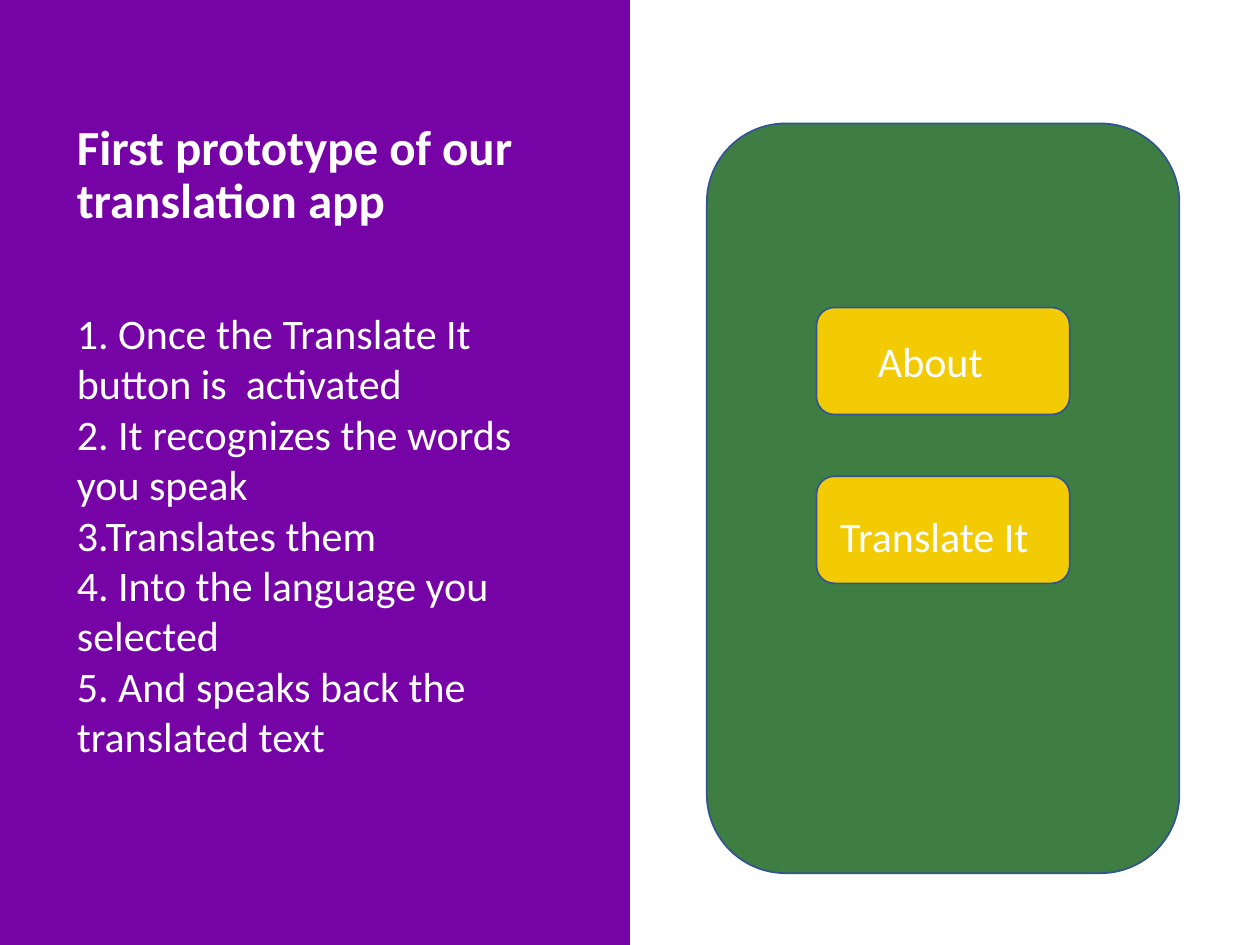
from lxml.etree import SubElement
from pptx import Presentation
from pptx.dml.color import RGBColor
from pptx.enum.shapes import MSO_SHAPE
from pptx.enum.text import MSO_ANCHOR, MSO_AUTO_SIZE, PP_ALIGN
from pptx.oxml.ns import qn
from pptx.util import Inches, Pt

HEADING = "First prototype of our translation app"
STEPS = [
    "1. Once the Translate It button is  activated",
    "2. It recognizes the words you speak",
    "3.Translates them",
    "4. Into the language you selected",
    "5. And speaks back the translated text",
]
BUTTONS = [
    ("About", (6.87, 2.61, 1.23, 0.5)),
    ("Translate It", (6.57, 4, 2.01, 0.5)),
]
THEME = {
    "font": "Calibri",
    "heading": 28,
    "body": 24,
    "text": "FFFFFF",
    "panel": "7503A6",
    "phone": "3F7E43",
    "button": "F2CB05",
    "outline": "325491",
}
PANEL = (0, 0, 5, 7.5)
HEADING_BOX = (0.51, 0.67, 4.03, 1.45)
STEPS_BOX = (0.51, 2.39, 4.03, 3.74)
PHONE = (5.61, 0.98, 3.75, 5.95)
BUTTON_LEFT, BUTTON_TOP, BUTTON_WIDTH, BUTTON_HEIGHT = 6.48, 2.44, 2.01, 0.85
BUTTON_PITCH = 1.34


def color(role):
    return RGBColor.from_string(THEME[role])


def place(holder, box):
    holder.left, holder.top, holder.width, holder.height = map(Inches, box)


def add_block(slide, preset, box, fill, outline=None):
    block = slide.shapes.add_shape(preset, *map(Inches, box))
    block.shadow.inherit = False
    block.fill.solid()
    block.fill.fore_color.rgb = color(fill)
    if outline:
        block.line.color.rgb = color(outline)
        block.line.width = Pt(1)
    else:
        block.line.fill.background()
    return block


def write(holder, lines, size, anchor=MSO_ANCHOR.TOP, bold=False, spacing=1.0):
    frame = holder.text_frame
    frame.text = "\n".join(lines)
    frame.word_wrap = True
    frame.auto_size = MSO_AUTO_SIZE.NONE
    frame.vertical_anchor = anchor
    for paragraph in frame.paragraphs:
        paragraph.alignment = PP_ALIGN.LEFT
        paragraph.line_spacing = spacing
        paragraph.space_before = Pt(0)
        font = paragraph.font
        font.name, font.size, font.bold = THEME["font"], Pt(THEME[size]), bold
        font.color.rgb = color("text")


def remove_bullets(holder):
    for paragraph in holder.text_frame.paragraphs:
        properties = paragraph._p.get_or_add_pPr()
        properties.set("marL", "0")
        properties.set("indent", "0")
        SubElement(properties, qn("a:buNone"))


def main():
    deck = Presentation()
    deck.slide_width, deck.slide_height = Inches(10), Inches(7.5)
    slide = deck.slides.add_slide(deck.slide_layouts[1])
    heading, steps = slide.shapes.title, slide.placeholders[1]

    panel = add_block(slide, MSO_SHAPE.RECTANGLE, PANEL, "panel")
    heading.element.addprevious(panel.element)

    place(heading, HEADING_BOX)
    write(heading, [HEADING], "heading", MSO_ANCHOR.MIDDLE, True, 0.9)

    place(steps, STEPS_BOX)
    steps.text_frame.text = "\n".join(STEPS)
    write(steps, STEPS, "body")
    remove_bullets(steps)

    add_block(slide, MSO_SHAPE.ROUNDED_RECTANGLE, PHONE, "phone", "outline")
    for index in range(len(BUTTONS)):
        top = BUTTON_TOP + index * BUTTON_PITCH
        box = (BUTTON_LEFT, top, BUTTON_WIDTH, BUTTON_HEIGHT)
        add_block(slide, MSO_SHAPE.ROUNDED_RECTANGLE, box, "button", "outline")
    for caption, box in BUTTONS:
        label = slide.shapes.add_textbox(*map(Inches, box))
        write(label, [caption], "body")

    deck.save("out.pptx")


if __name__ == "__main__":
    main()
